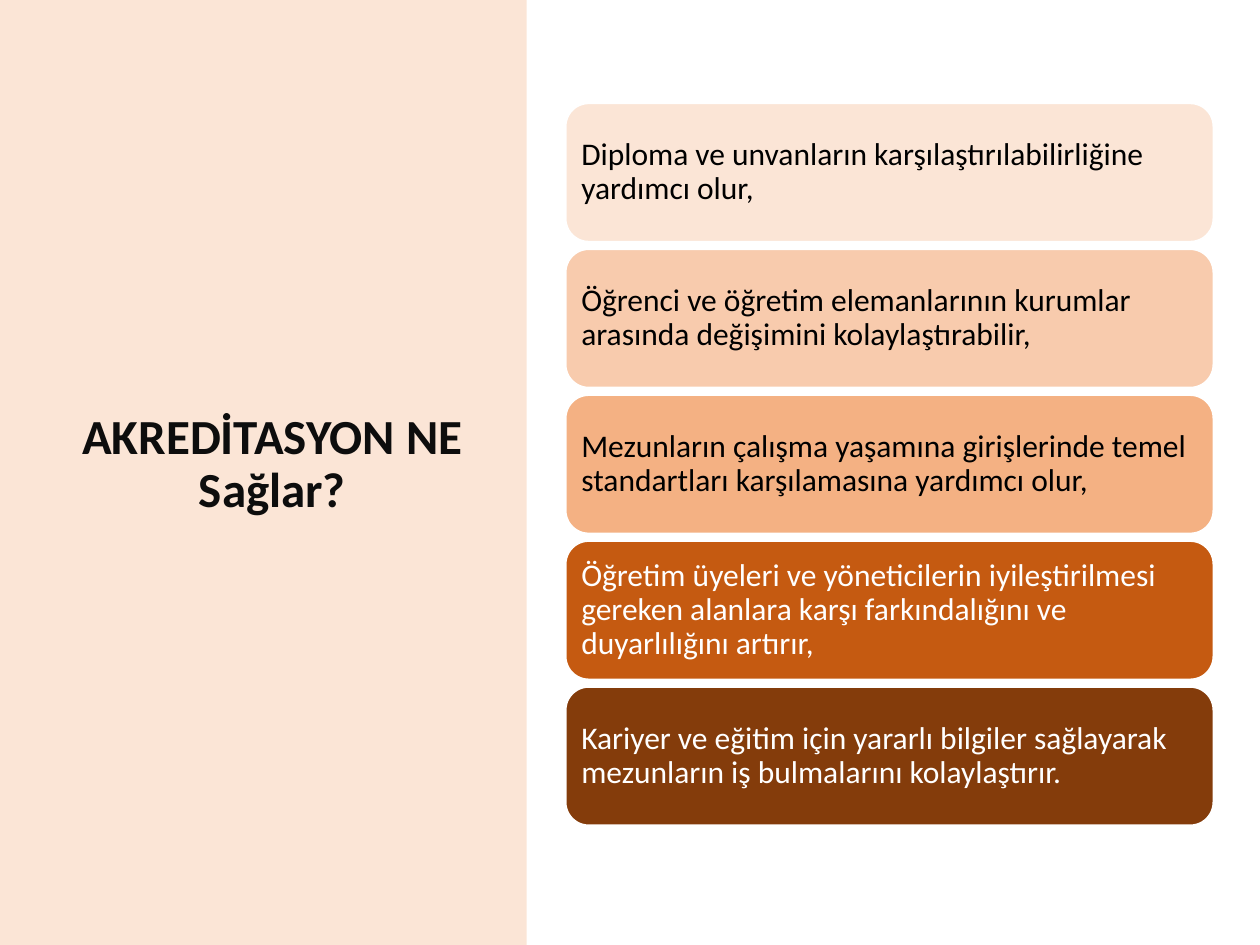
from pptx import Presentation
from pptx.dml.color import RGBColor
from pptx.enum.shapes import MSO_SHAPE as Shape
from pptx.enum.text import MSO_ANCHOR as Anchor, PP_ALIGN as Align
from pptx.util import Inches, Pt

FONT = "Calibri"
BLACK = RGBColor(0x00, 0x00, 0x00)
WHITE = RGBColor(0xFF, 0xFF, 0xFF)
INK = RGBColor(0x0D, 0x0D, 0x0D)
PEACH = RGBColor(0xFB, 0xE5, 0xD6)
APRICOT = RGBColor(0xF8, 0xCB, 0xAD)
ORANGE = RGBColor(0xF4, 0xB1, 0x83)
RUST = RGBColor(0xC5, 0x5A, 0x11)
BROWN = RGBColor(0x84, 0x3C, 0x0B)

TITLE_LINES = ["AKREDİTASYON NE ", "Sağlar? "]
BENEFITS = [
    ("Diploma ve unvanların karşılaştırılabilirliğine yardımcı olur,", PEACH, BLACK),
    ("Öğrenci ve öğretim elemanlarının kurumlar arasında değişimini kolaylaştırabilir,", APRICOT, BLACK),
    ("Mezunların çalışma yaşamına girişlerinde temel standartları karşılamasına yardımcı olur,", ORANGE, BLACK),
    ("Öğretim üyeleri ve yöneticilerin iyileştirilmesi gereken alanlara karşı farkındalığını ve duyarlılığını artırır,", RUST, WHITE),
    ("Kariyer ve eğitim için yararlı bilgiler sağlayarak mezunların iş bulmalarını kolaylaştırır.", BROWN, WHITE),
]


def add_run(p, text, size, color, bold=False):
    """Add one formatted run to a paragraph."""
    r = p.add_run()
    r.text = text
    r.font.name = FONT
    r.font.size = Pt(size)
    r.font.bold = bold
    r.font.color.rgb = color


def add_box(s, kind, x, y, w, h, fill):
    """Add a filled shape without a shadow or line."""
    sp = s.shapes.add_shape(kind, Inches(x), Inches(y), Inches(w), Inches(h))
    sp.shadow.inherit = False
    sp.fill.solid()
    sp.fill.fore_color.rgb = fill
    sp.line.fill.background()
    return sp


def add_title_panel(s, x, y, w, h):
    """Place the tinted side panel and its centred title."""
    add_box(s, Shape.RECTANGLE, x, y, w, h, PEACH)
    sp = s.shapes.add_textbox(
        Inches(x + 0.43), Inches(y + 0.68), Inches(w - 0.63), Inches(h - 1.48)
    )
    tf = sp.text_frame
    tf.word_wrap = True
    tf.vertical_anchor = Anchor.MIDDLE
    p = tf.paragraphs[0]
    p.alignment = Align.CENTER
    p.line_spacing = 0.9
    for i, line in enumerate(TITLE_LINES):
        if i:
            p.add_line_break()
        add_run(p, line, 28, INK, bold=True)


def add_benefits(s, x, y, w, h, gap=0.06):
    """Stack the benefit cards evenly in the given box."""
    card_h = (h - gap * (len(BENEFITS) - 1)) / len(BENEFITS)
    for i, (text, fill, color) in enumerate(BENEFITS):
        top = y + i * (card_h + gap)
        sp = add_box(s, Shape.ROUNDED_RECTANGLE, x, top, w, card_h, fill)
        sp.line.color.rgb = WHITE
        sp.line.width = Pt(1)
        tf = sp.text_frame
        tf.word_wrap = True
        tf.vertical_anchor = Anchor.MIDDLE
        tf.margin_left = tf.margin_right = Inches(0.07)
        tf.margin_top = tf.margin_bottom = Inches(0.07)
        p = tf.paragraphs[0]
        p.alignment = Align.LEFT
        p.line_spacing = 0.9
        add_run(p, text, 18, color)


def main():
    """Build the slide and save it."""
    prs = Presentation()
    prs.slide_width = Inches(10)
    prs.slide_height = Inches(7.5)
    s = prs.slides.add_slide(prs.slide_layouts[6])
    add_title_panel(s, 0, 0, 4.18, 7.5)
    add_benefits(s, 4.49, 0.82, 5.14, 5.73)
    prs.save("out.pptx")


if __name__ == "__main__":
    main()
